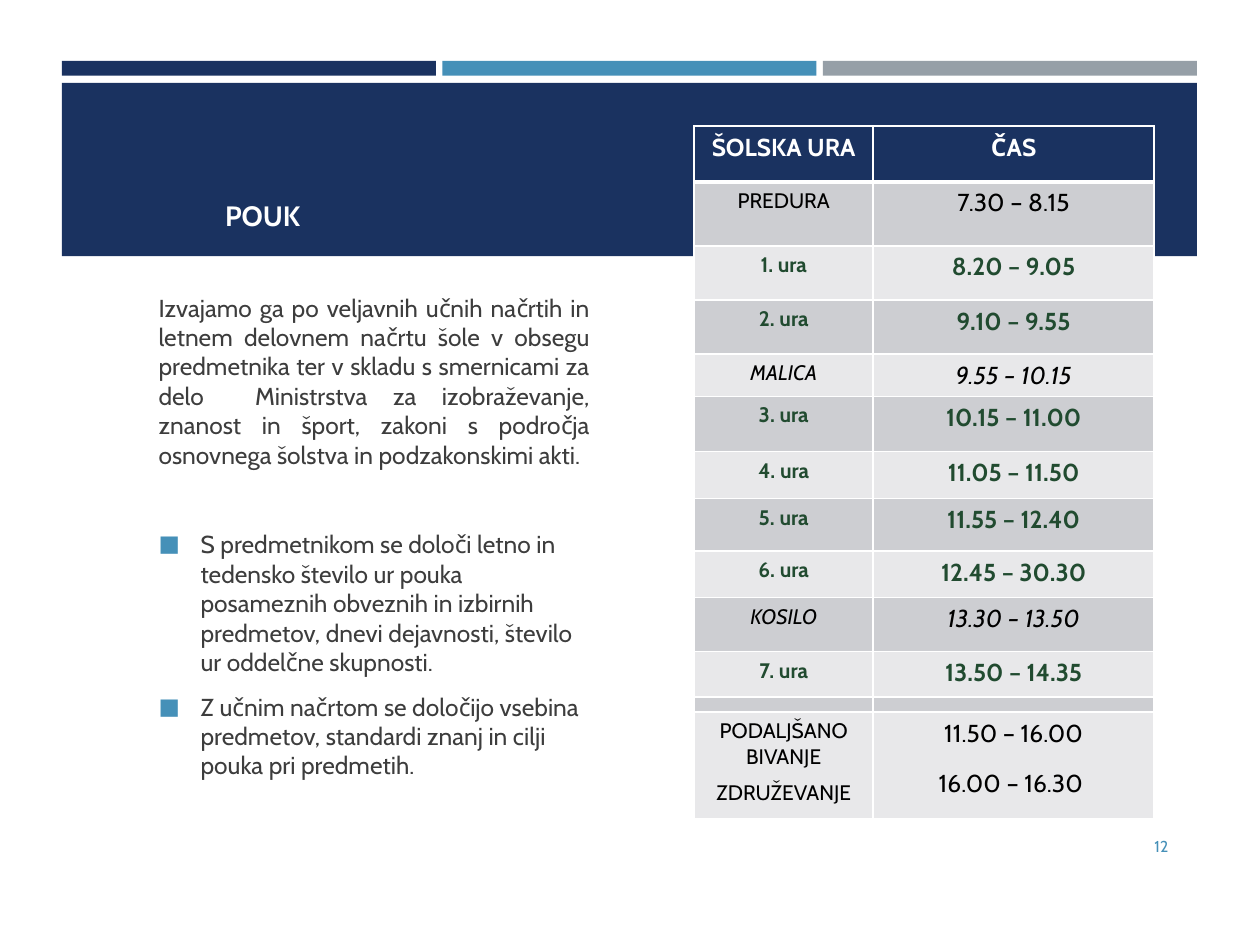
"""Build the slide about lessons with the school timetable."""
from dataclasses import dataclass

from lxml.etree import SubElement
from pptx import Presentation
from pptx.dml.color import RGBColor
from pptx.enum.shapes import MSO_SHAPE as Shape
from pptx.enum.text import MSO_ANCHOR as Anchor, PP_ALIGN as Align
from pptx.oxml.ns import qn
from pptx.util import Pt

NAVY = RGBColor(0x1A, 0x32, 0x60)
BLUE = RGBColor(0x45, 0x90, 0xB8)
GREY = RGBColor(0x96, 0x9F, 0xA7)
WHITE = RGBColor(0xFF, 0xFF, 0xFF)
BLACK = RGBColor(0x00, 0x00, 0x00)
TEXT = RGBColor(0x3D, 0x3D, 0x3D)
GREEN = RGBColor(0x21, 0x4B, 0x30)
BANDS = RGBColor(0xE8, 0xE8, 0xEA), RGBColor(0xCD, 0xCE, 0xD2)

HEADER = {"color": WHITE, "bold": True}
PLAIN = {"color": BLACK}
LESSON = {"color": GREEN, "bold": True}
BREAK = {"color": BLACK, "italic": True}

TIMETABLE = [
    (32, HEADER, "ŠOLSKA URA", "ČAS"),
    (36.5, PLAIN, "PREDURA", "7.30 – 8.15"),
    (31, LESSON, "1. ura", "8.20 – 9.05"),
    (31, LESSON, "2. ura", "9.10 – 9.55"),
    (24, BREAK, "MALICA", "9.55 – 10.15"),
    (31.5, LESSON, "3. ura", "10.15 – 11.00"),
    (27, LESSON, "4. ura", "11.05 – 11.50"),
    (30, LESSON, "5. ura", "11.55 – 12.40"),
    (26.5, LESSON, "6. ura", "12.45 – 30.30"),
    (31, BREAK, "KOSILO", "13.30 – 13.50"),
    (26, LESSON, "7. ura", "13.50 – 14.35"),
    (8.5, PLAIN, "", ""),
    (61, PLAIN, "PODALJŠANO BIVANJE\nZDRUŽEVANJE", "11.50 – 16.00\n16.00 – 16.30 "),
]

BODY = [
    ("POUK", {"size": 16, "color": WHITE, "bold": True, "indent": 38, "after": 34.4}),
    ("Izvajamo ga po veljavnih učnih načrtih in letnem delovnem načrtu šole v obsegu "
     "predmetnika ter v skladu s smernicami za delo  Ministrstva za izobraževanje, "
     "znanost in šport, zakoni s področja osnovnega šolstva in podzakonskimi akti.",
     {"align": Align.JUSTIFY, "after": 34.4}),
    ("S predmetnikom se določi letno in tedensko število ur pouka "
     "posameznih obveznih in izbirnih predmetov, dnevi dejavnosti, število "
     "ur oddelčne skupnosti.", {"bullet": "■", "after": 8.7}),
    ("Z učnim načrtom se določijo vsebina predmetov, standardi znanj in cilji "
     "pouka pri predmetih.", {"bullet": "■"}),
]


@dataclass
class SlideBuilder:
    """Hold the style and the current slide, and add elements to it."""
    slide: object
    font: str = "Cabin"
    size: float = 14
    hanging: float = 24

    def bar(self, left, top, width, height, color):
        """Add a plain filled rectangle."""
        shape = self.slide.shapes.add_shape(
            Shape.RECTANGLE, Pt(left), Pt(top), Pt(width), Pt(height))
        shape.shadow.inherit = False
        shape.fill.solid()
        shape.fill.fore_color.rgb = color
        shape.line.fill.background()

    def paragraph(self, paragraph, text, style):
        """Write and format one paragraph."""
        paragraph.alignment = style.get("align", Align.LEFT)
        paragraph.space_before = Pt(style.get("before", 0))
        paragraph.space_after = Pt(style.get("after", 0))
        run = paragraph.add_run()
        run.text = text
        values = {"name": self.font, "size": Pt(style.get("size", self.size)),
                  "bold": style.get("bold", False), "italic": style.get("italic", False)}
        for name, value in values.items():
            setattr(run.font, name, value)
        run.font.color.rgb = style.get("color", TEXT)
        properties = paragraph._p.get_or_add_pPr()
        if "indent" in style:
            properties.set("marL", str(Pt(style["indent"])))
        if "bullet" in style:
            self.bullet(properties, style["bullet"])

    def bullet(self, properties, character):
        """Give a paragraph a coloured hanging bullet."""
        properties.set("marL", str(Pt(self.hanging)))
        properties.set("indent", str(-Pt(self.hanging)))
        color = SubElement(properties, qn("a:buClr"))
        SubElement(color, qn("a:srgbClr"), val=str(BLUE))
        SubElement(properties, qn("a:buSzPct"), val="92000")
        SubElement(properties, qn("a:buFont"), typeface=self.font)
        SubElement(properties, qn("a:buChar"), char=character)

    def text(self, left, top, width, height, paragraphs, anchor=Anchor.TOP):
        """Add a wrapping text box."""
        box = self.slide.shapes.add_textbox(Pt(left), Pt(top), Pt(width), Pt(height))
        frame = box.text_frame
        frame.word_wrap = True
        frame.vertical_anchor = anchor
        for index, (text, style) in enumerate(paragraphs):
            paragraph = frame.add_paragraph() if index else frame.paragraphs[0]
            self.paragraph(paragraph, text, style)

    def borders(self, cell, bottom):
        """Draw white lines around a cell."""
        properties = cell._tc.get_or_add_tcPr()
        widths = {"a:lnL": 1, "a:lnR": 1, "a:lnT": 1, "a:lnB": bottom}
        for index, (tag, width) in enumerate(widths.items()):
            line = SubElement(properties, qn(tag), w=str(Pt(width)))
            fill = SubElement(line, qn("a:solidFill"))
            SubElement(fill, qn("a:srgbClr"), val=str(WHITE))
            properties.insert(index, line)

    def cell(self, cell, text, style, gap):
        """Fill a cell with centred lines of text."""
        if not text:
            cell.margin_top = cell.margin_bottom = 0
            cell.text_frame.paragraphs[0]._p.get_or_add_endParaRPr().set("sz", "400")
            return
        for index, line in enumerate(text.split("\n")):
            frame = cell.text_frame
            paragraph = frame.add_paragraph() if index else frame.paragraphs[0]
            before = gap if index else 0
            self.paragraph(paragraph, line, {**style, "align": Align.CENTER, "before": before})

    def table(self, left, top, widths, rows):
        """Add the banded timetable."""
        height = sum(row[0] for row in rows)
        table = self.slide.shapes.add_table(
            len(rows), len(widths), Pt(left), Pt(top), Pt(sum(widths)), Pt(height)).table
        for column, width in zip(table.columns, widths):
            column.width = Pt(width)
        for index, (height, style, *texts) in enumerate(rows):
            table.rows[index].height = Pt(height)
            header = style is HEADER
            sizes = (14, 14) if header else (12, 14)
            for cell, text, size, gap in zip(table.rows[index].cells, texts, sizes, (6, 12)):
                cell.fill.solid()
                cell.fill.fore_color.rgb = NAVY if header else BANDS[index % 2]
                self.borders(cell, 3 if header else 1)
                self.cell(cell, text, {**style, "size": size}, gap)


def main():
    """Create the presentation and save it."""
    presentation = Presentation()
    presentation.slide_width, presentation.slide_height = Pt(720), Pt(540)
    builder = SlideBuilder(presentation.slides.add_slide(presentation.slide_layouts[6]))
    for index, color in enumerate((NAVY, BLUE, GREY)):
        builder.bar(35.4 + index * 217.4, 34.8, 213.7, 8.4, color)
    builder.bar(35.4, 47.3, 648.5, 99, NAVY)
    builder.text(83.5, 110, 260.6, 345, BODY)
    builder.table(396.7, 72, (102.3, 160.5), TIMETABLE)
    number = {"size": 9, "color": BLUE, "align": Align.RIGHT}
    builder.text(614.2, 469, 60.5, 28.8, [("12", number)], Anchor.MIDDLE)
    presentation.save("out.pptx")


if __name__ == "__main__":
    main()
